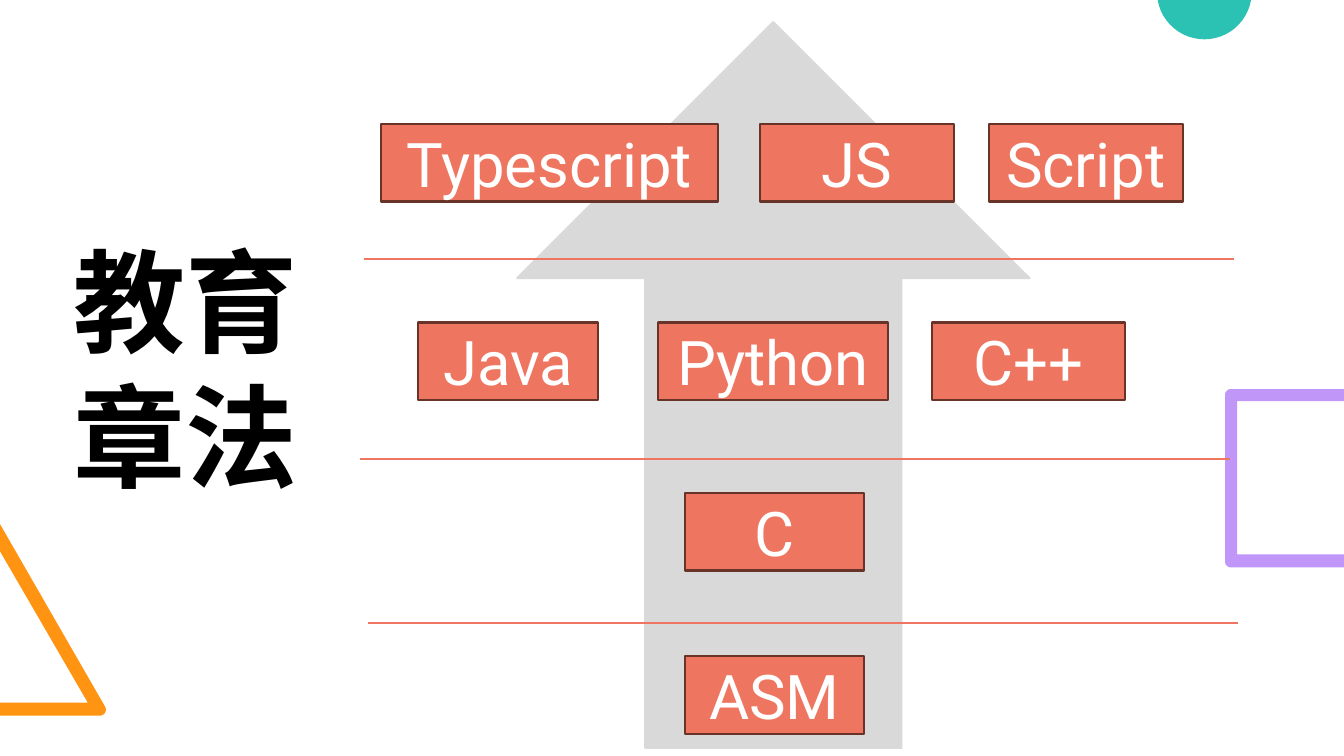
from math import cos, radians, sin

from lxml import etree
from pptx import Presentation
from pptx.dml.color import RGBColor
from pptx.enum.shapes import MSO_CONNECTOR, MSO_SHAPE
from pptx.enum.text import MSO_ANCHOR, MSO_AUTO_SIZE, PP_ALIGN
from pptx.oxml.ns import qn
from pptx.util import Inches, Pt

RECT, UP_ARROW = MSO_SHAPE.RECTANGLE, MSO_SHAPE.UP_ARROW
STRAIGHT = MSO_CONNECTOR.STRAIGHT
CENTER, MIDDLE = PP_ALIGN.CENTER, MSO_ANCHOR.MIDDLE
FIT_TEXT = MSO_AUTO_SIZE.SHAPE_TO_FIT_TEXT

FONT = "Roboto"
W, H = 13.33, 7.5
COLORS = {name: RGBColor.from_string(value) for name, value in {
    "coral": "EE7660", "edge": "68342A", "gray": "D9D9D9", "white": "FFFFFF",
    "black": "000000", "orange": "FF9413", "teal": "2BC2B4", "purple": "C097F8",
}.items()}


def arc(cx, cy, radius, start, end, steps=24):
    """Points along a circle, with angles in degrees running clockwise."""
    angles = [radians(start + (end - start) * i / steps) for i in range(steps + 1)]
    return [(cx + radius * cos(a), cy + radius * sin(a)) for a in angles]


def paint(shape, fill, line=None):
    shape.shadow.inherit = False
    shape.fill.solid()
    shape.fill.fore_color.rgb = COLORS[fill]
    if line:
        shape.line.color.rgb = COLORS[line]
        shape.line.width = Pt(1.5)
    else:
        shape.line.fill.background()


prs = Presentation()
prs.slide_width, prs.slide_height = Inches(W), Inches(H)
s = prs.slides.add_slide(prs.slide_layouts[6])

# Corner ornaments, cut off at the slide's edges
ornaments = [
    ("orange", [(0, 7.1), (0, 6.97), (0.87, 6.97), (0, 5.47), (0, 5.2)]
     + arc(0.99, 7.04, 0.06, -30, 90)),
    ("teal", arc(11.945, -0.08, 0.47, 9.8, 170.2)),
    ("purple", [(W, 5.63)] + arc(12.21, 5.57, 0.06, 90, 180)
     + arc(12.21, 3.92, 0.06, 180, 270)
     + [(W, 3.86), (W, 3.98), (12.27, 3.98), (12.27, 5.5), (W, 5.5)]),
]
for color, outline in ornaments:
    points = [(Inches(x), Inches(y)) for x, y in outline]
    builder = s.shapes.build_freeform(*points[0])
    builder.add_line_segments(points[1:], close=True)
    paint(builder.convert_to_shape(), color)

# Arrow rising behind the levels
arrow = s.shapes.add_shape(UP_ARROW, Inches(5.13), Inches(0.22), Inches(5.08), Inches(7.2))
paint(arrow, "gray", "gray")

# Title
title = s.shapes.add_textbox(Inches(0.63), Inches(2.26), Inches(2.6), Inches(2.79))
tf = title.text_frame
tf.word_wrap = True
tf.auto_size = FIT_TEXT
tf.text = "教育章法"
r = tf.paragraphs[0].runs[0]
r.font.name, r.font.size, r.font.bold = FONT, Pt(80), True
r.font.color.rgb = COLORS["black"]
etree.SubElement(r.font._element, qn("a:ea")).set("typeface", FONT)

# Language levels: top, then (name, left, width) of each box
BOX_H, NARROW, WIDE = 0.77, 1.78, 1.92
levels = [
    (6.51, [("ASM", 6.79, NARROW)]),
    (4.89, [("C", 6.79, NARROW)]),
    (3.2, [("Java", 4.15, NARROW), ("Python", 6.53, 2.28), ("C++", 9.24, WIDE)]),
    (1.23, [("Typescript", 3.78, 3.34), ("JS", 7.54, WIDE), ("Script", 9.81, WIDE)]),
]
for top, boxes in levels:
    for name, left, width in boxes:
        sp = s.shapes.add_shape(RECT, Inches(left), Inches(top), Inches(width), Inches(BOX_H))
        paint(sp, "coral", "edge")
        tf = sp.text_frame
        tf.text = name
        tf.vertical_anchor = MIDDLE
        p = tf.paragraphs[0]
        p.alignment = CENTER
        font = p.runs[0].font
        font.name, font.size = FONT, Pt(44)
        font.color.rgb = COLORS["white"]

# Dividers between the levels
DIVIDER_W = 8.63
for left, y in [(3.61, 2.57), (3.65, 6.18), (3.57, 4.55)]:
    divider = s.shapes.add_connector(
        STRAIGHT, Inches(left), Inches(y), Inches(left + DIVIDER_W), Inches(y))
    divider.line.color.rgb = COLORS["coral"]
    divider.line.width = Pt(1.5)
    etree.SubElement(divider._element.spPr, qn("a:effectLst"))

prs.save("out.pptx")
